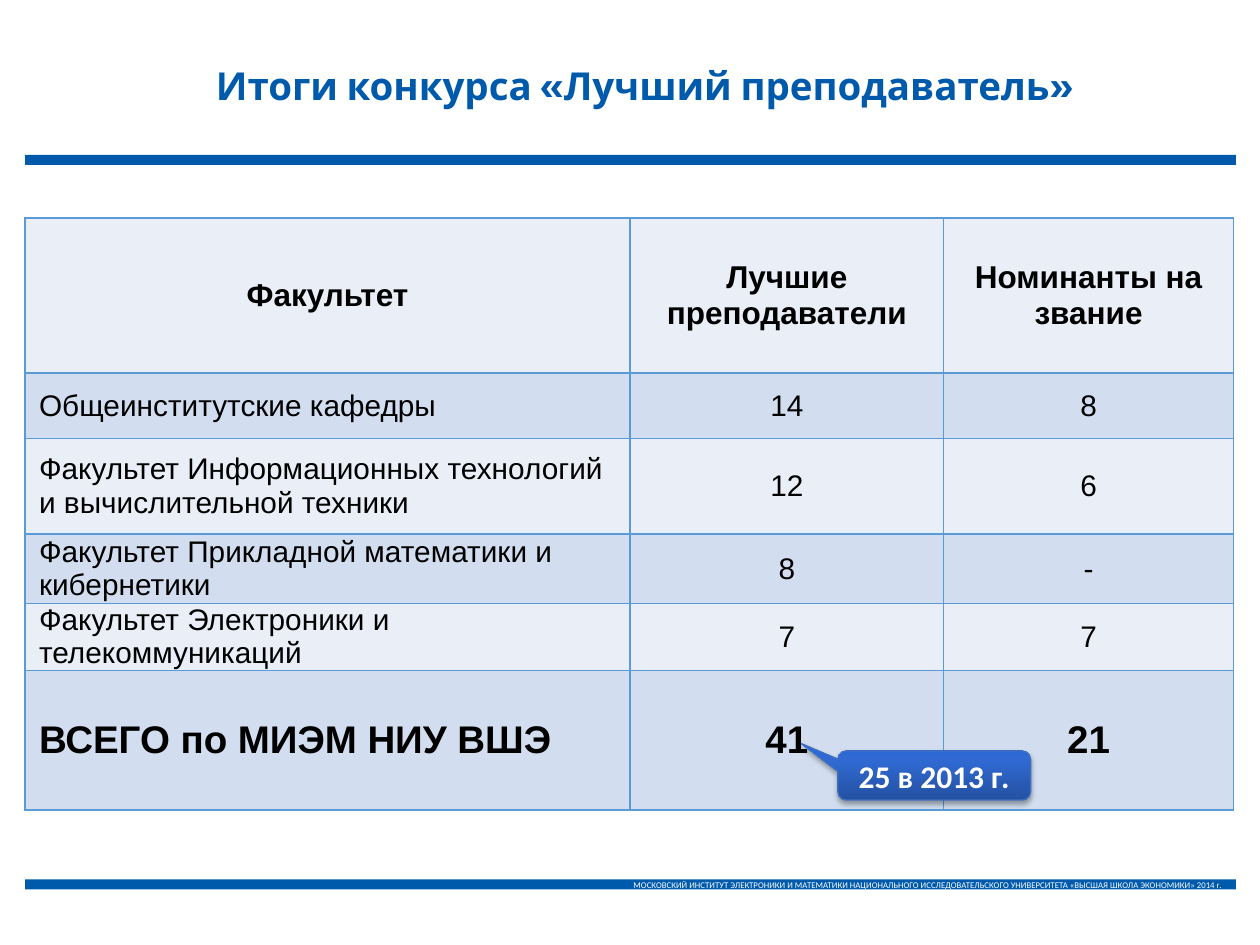
from copy import deepcopy
from dataclasses import dataclass

from lxml.etree import SubElement
from pptx import Presentation
from pptx.dml.color import RGBColor
from pptx.enum.shapes import MSO_SHAPE as Shape
from pptx.enum.text import MSO_ANCHOR as Anchor, PP_ALIGN as Align
from pptx.oxml.ns import qn
from pptx.util import Inches, Pt

SLIDE_WIDTH, SLIDE_HEIGHT = Inches(10), Inches(7.5)
GRID_COLUMNS, GRID_ROWS = 100, 75

BRAND_BLUE = RGBColor(0x00, 0x5A, 0xAB)
BORDER_BLUE = RGBColor(0x5B, 0x9B, 0xD5)
ROW_FILLS = RGBColor(0xEA, 0xEF, 0xF7), RGBColor(0xD2, 0xDE, 0xEF)
CALLOUT_DARK = RGBColor(0x24, 0x51, 0xA1)
CALLOUT_MIDDLE = RGBColor(0x2F, 0x69, 0xD1)
CALLOUT_LIGHT = RGBColor(0x2C, 0x69, 0xD5)
CALLOUT_LINE = RGBColor(0x3F, 0x6F, 0xC3)
SHADOW = RGBColor(0, 0, 0)
BLACK = RGBColor(0, 0, 0)
WHITE = RGBColor(0xFF, 0xFF, 0xFF)

TITLE = "Итоги конкурса «Лучший преподаватель»"
FOOTER = (
    "МОСКОВСКИЙ ИНСТИТУТ ЭЛЕКТРОНИКИ И МАТЕМАТИКИ НАЦИОНАЛЬНОГО "
    "ИССЛЕДОВАТЕЛЬСКОГО УНИВЕРСИТЕТА «ВЫСШАЯ ШКОЛА ЭКОНОМИКИ» 2014 г."
)
RESULTS = [
    ("Факультет", "Лучшие преподаватели", "Номинанты на звание"),
    ("Общеинститутские кафедры", "14", "8"),
    ("Факультет Информационных технологий и вычислительной техники", "12", "6"),
    ("Факультет Прикладной математики и кибернетики", "8", "-"),
    ("Факультет Электроники и телекоммуникаций", "7", "7"),
    ("ВСЕГО по МИЭМ НИУ ВШЭ", "41", "21"),
]
RESULT_COLUMNS = 48, 24.9, 23
RESULT_ROWS = 12.3, 5.2, 7.6, 5.5, 5.1, 11.1


def across(columns):
    return round(SLIDE_WIDTH * columns / GRID_COLUMNS)


def down(rows):
    return round(SLIDE_HEIGHT * rows / GRID_ROWS)


@dataclass
class Box:
    column: float
    row: float
    columns: float
    rows: float

    def place(self):
        return (across(self.column), down(self.row),
                across(self.columns), down(self.rows))


def write(frame, words, size, font, color, bold=False, align=Align.CENTER):
    paragraph = frame.paragraphs[0]
    paragraph.alignment = align
    run = paragraph.add_run()
    run.text = words
    run.font.size = Pt(size)
    run.font.name = font
    run.font.bold = bold
    run.font.color.rgb = color


def draw_title(slide, box):
    title = slide.shapes.add_textbox(*box.place())
    title.text_frame.word_wrap = True
    write(title.text_frame, TITLE, 22, "Cabin", BRAND_BLUE, bold=True)


def draw_rule(slide, box):
    rule = slide.shapes.add_shape(Shape.RECTANGLE, *box.place())
    rule.shadow.inherit = False
    rule.fill.solid()
    rule.fill.fore_color.rgb = BRAND_BLUE
    rule.line.fill.background()
    return rule


def draw_footer(slide, box):
    frame = draw_rule(slide, box).text_frame
    frame.vertical_anchor = Anchor.MIDDLE
    write(frame, FOOTER, 5, "Calibri", WHITE, align=Align.RIGHT)


def add_color(parent, color, opacity=100):
    element = SubElement(parent, qn("a:srgbClr"), val=str(color))
    if opacity < 100:
        SubElement(element, qn("a:alpha"), val=str(opacity * 1000))


def border(cell):
    properties = cell._tc.get_or_add_tcPr()
    for position, side in enumerate(("a:lnL", "a:lnR", "a:lnT", "a:lnB")):
        edge = SubElement(properties, qn(side), w=str(Pt(1)))
        add_color(SubElement(edge, qn("a:solidFill")), BORDER_BLUE)
        properties.insert(position, edge)


def draw_results(slide, box):
    results = slide.shapes.add_table(
        len(RESULTS), len(RESULT_COLUMNS), *box.place()).table
    results.first_row = False
    results.horz_banding = False
    for column, columns in zip(results.columns, RESULT_COLUMNS):
        column.width = across(columns)
    for row, rows in zip(results.rows, RESULT_ROWS):
        row.height = down(rows)

    header, total = 0, len(RESULTS) - 1
    sizes = {header: 18, total: 22}
    for r, entries in enumerate(RESULTS):
        for c, words in enumerate(entries):
            is_name = c == 0 and r != header
            cell = results.cell(r, c)
            cell.vertical_anchor = Anchor.MIDDLE
            cell.margin_left = across(1.1 if is_name else 0.3)
            cell.margin_right = across(0.3)
            cell.margin_top = cell.margin_bottom = 0
            cell.fill.solid()
            cell.fill.fore_color.rgb = ROW_FILLS[r % 2]
            border(cell)
            write(cell.text_frame, words, sizes.get(r, 17), "Arial", BLACK,
                  bold=r in sizes, align=Align.LEFT if is_name else Align.CENTER)


def fill_callout(callout):
    callout.fill.gradient()
    callout.fill.gradient_angle = 90
    stops = callout.fill.gradient_stops
    last = stops[1]._gs
    last.addnext(deepcopy(last))
    shades = (0, CALLOUT_DARK), (0.8, CALLOUT_MIDDLE), (1, CALLOUT_LIGHT)
    for stop, (position, color) in zip(callout.fill.gradient_stops, shades):
        stop.position = position
        stop.color.rgb = color


def cast_shadow(callout):
    callout.shadow.inherit = False
    effects = callout._element.spPr.find(qn("a:effectLst"))
    shadow = SubElement(effects, qn("a:outerShdw"), blurRad=str(Pt(3.1)),
                        dist=str(Pt(1.8)), dir="5400000", rotWithShape="0")
    add_color(shadow, SHADOW, opacity=35)


def draw_callout(slide, box):
    callout = slide.shapes.add_shape(
        Shape.ROUNDED_RECTANGULAR_CALLOUT, *box.place())
    for index, amount in enumerate((-0.69, -0.65, 0.17)):
        callout.adjustments[index] = amount
    fill_callout(callout)
    callout.line.color.rgb = CALLOUT_LINE
    callout.line.width = Pt(0.75)
    cast_shadow(callout)
    callout.text_frame.vertical_anchor = Anchor.MIDDLE
    write(callout.text_frame, "25 в 2013 г.", 18, "Calibri", WHITE, bold=True)


def main():
    deck = Presentation()
    deck.slide_width, deck.slide_height = SLIDE_WIDTH, SLIDE_HEIGHT
    slide = deck.slides.add_slide(deck.slide_layouts[6])
    draw_footer(slide, Box(2, 69.8, 96.1, 0.8))
    draw_rule(slide, Box(2, 12.3, 96.1, 0.8))
    draw_results(slide, Box(2, 17.3, sum(RESULT_COLUMNS), sum(RESULT_ROWS)))
    draw_callout(slide, Box(66.5, 59.6, 15.3, 3.9))
    draw_title(slide, Box(15.3, 4.4, 71.7, 4.7))
    deck.save("out.pptx")


if __name__ == "__main__":
    main()
